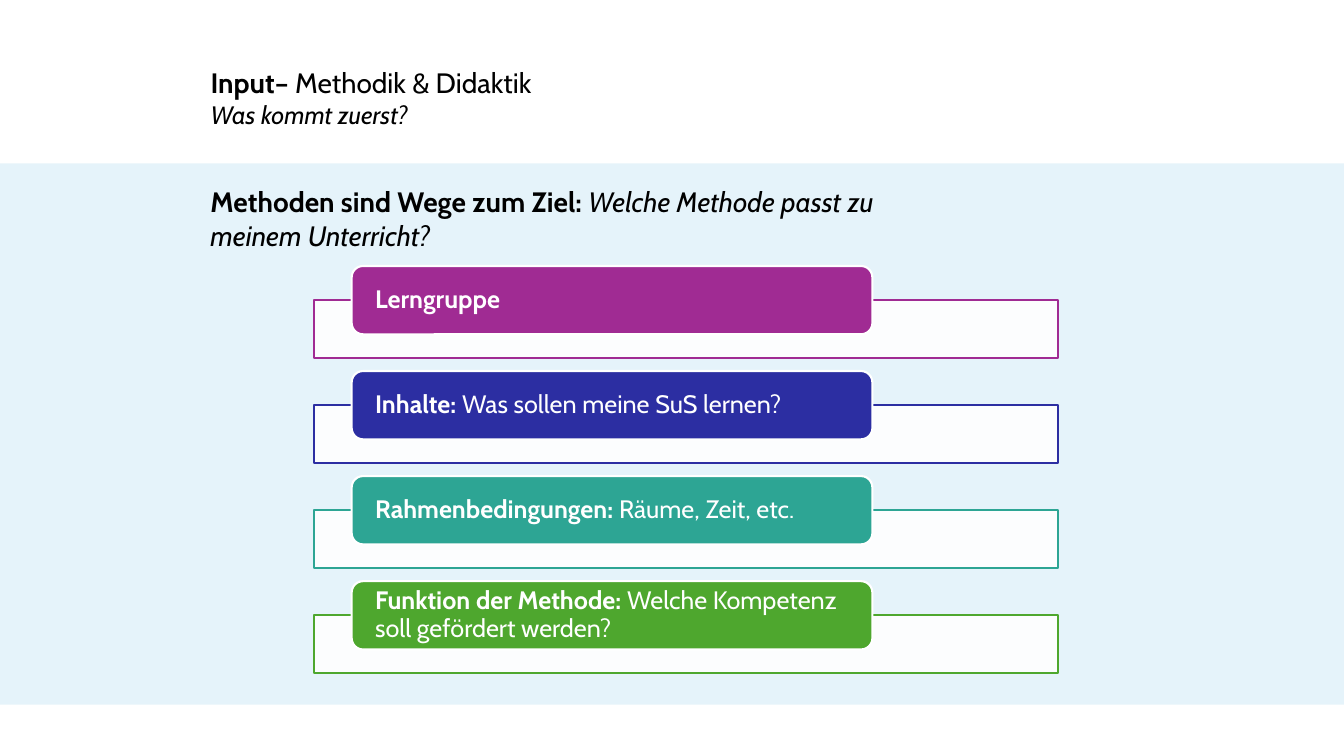
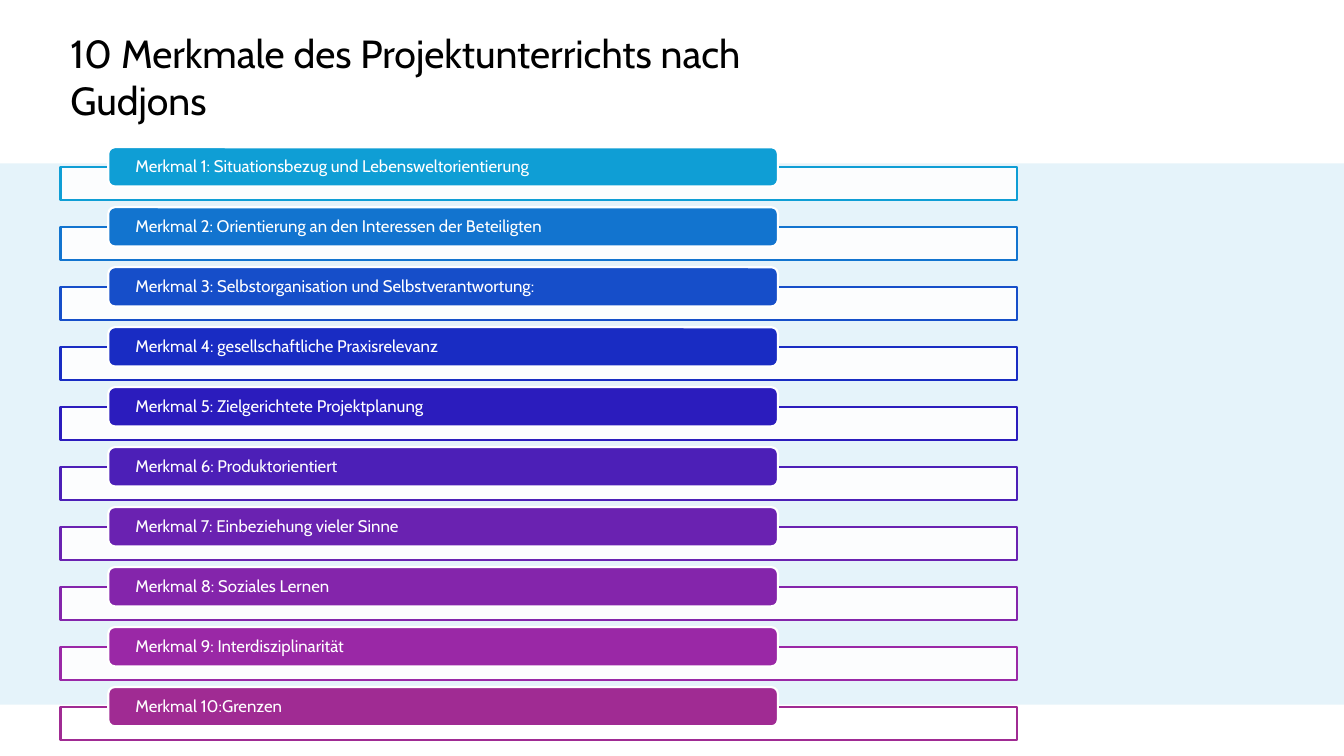
from lxml import etree
from pptx import Presentation
from pptx.dml.color import RGBColor
from pptx.enum.shapes import MSO_SHAPE
from pptx.enum.text import MSO_ANCHOR, PP_ALIGN
from pptx.oxml.ns import qn
from pptx.util import Pt

RECTANGLE = MSO_SHAPE.RECTANGLE
ROUNDED = MSO_SHAPE.ROUNDED_RECTANGLE
LEFT = PP_ALIGN.LEFT
TOP = MSO_ANCHOR.TOP
MIDDLE = MSO_ANCHOR.MIDDLE

SLIDE_WIDTH, SLIDE_HEIGHT = 960, 540
FONT = "Cabin"
COLORS = {
    "text": "000000",
    "white": "FFFFFF",
    "band": "008CCF",
    "plum": "A02B93",
    "indigo": "2C2EA2",
    "teal": "2DA594",
    "green": "4EA72E",
    "sky": "0F9ED5",
    "azure": "1274CF",
    "blue": "164EC9",
    "royal": "192CC3",
    "ultramarine": "2B1CBD",
    "violet": "4C1FB7",
    "purple": "6A22B1",
    "orchid": "8425AB",
    "magenta": "9A28A6",
}

METHOD_QUESTIONS = [
    ("plum", [("Lerngruppe", "b")]),
    ("indigo", [("Inhalte: ", "b"), ("Was sollen meine SuS lernen?", "")]),
    ("teal", [("Rahmenbedingungen: ", "b"), ("Räume, Zeit, etc.", "")]),
    ("green", [("Funktion der Methode: ", "b"),
               ("Welche Kompetenz soll gefördert werden?", "")]),
]
PROJECT_FEATURES = [
    ("sky", [("Merkmal 1: Situationsbezug und Lebensweltorientierung", "")]),
    ("azure", [("Merkmal 2: Orientierung an den Interessen der Beteiligten", "")]),
    ("blue", [("Merkmal 3: Selbstorganisation und Selbstverantwortung:", "")]),
    ("royal", [("Merkmal 4: gesellschaftliche Praxisrelevanz", "")]),
    ("ultramarine", [("Merkmal 5: Zielgerichtete Projektplanung", "")]),
    ("violet", [("Merkmal 6: Produktorientiert", "")]),
    ("purple", [("Merkmal 7: Einbeziehung vieler Sinne", "")]),
    ("orchid", [("Merkmal 8: Soziales Lernen", "")]),
    ("magenta", [("Merkmal 9: Interdisziplinarität", "")]),
    ("plum", [("Merkmal 10:Grenzen", "")]),
]


def rgb(color):
    """Return the named colour."""
    return RGBColor.from_string(COLORS[color])


def add_panel(slide, box, fill, line=None, kind=RECTANGLE, opacity=100):
    """Add a flat shape with an optional outline and transparency."""
    panel = slide.shapes.add_shape(kind, *map(Pt, box))
    panel.shadow.inherit = False
    panel.fill.solid()
    panel.fill.fore_color.rgb = rgb(fill)
    if opacity < 100:
        fill_color = panel._element.spPr.find(qn("a:solidFill"))[0]
        etree.SubElement(fill_color, qn("a:alpha"), val=str(opacity * 1000))
    if line:
        panel.line.color.rgb = rgb(line)
        panel.line.width = Pt(1.5)
    else:
        panel.line.fill.background()
    return panel


def write_text(frame, paragraphs, color="text", anchor=TOP, spacing=1,
               margins=(7.2, 3.6)):
    """Write paragraphs, each a size and a list of (text, style) runs."""
    frame.word_wrap = True
    frame.vertical_anchor = anchor
    frame.margin_left = frame.margin_right = Pt(margins[0])
    frame.margin_top = frame.margin_bottom = Pt(margins[1])
    for index, (size, runs) in enumerate(paragraphs):
        paragraph = frame.add_paragraph() if index else frame.paragraphs[0]
        paragraph.alignment = LEFT
        paragraph.line_spacing = spacing
        for text, style in runs:
            run = paragraph.add_run()
            run.text = text
            run.font.name = FONT
            run.font.size = Pt(size)
            run.font.bold = "b" in style
            run.font.italic = "i" in style
            run.font.color.rgb = rgb(color)


def add_heading(slide, box, paragraphs):
    """Place heading text in its box."""
    heading = slide.shapes.add_textbox(*map(Pt, box))
    write_text(heading.text_frame, paragraphs)


def add_tab_list(slide, box, entries, tab_height, size, indent):
    """Spread tabbed frames evenly over the height of the box."""
    left, top, width, height = box
    frame_height = 0.85 * tab_height
    row_height = tab_height / 2 + frame_height
    pitch = (height - row_height) / (len(entries) - 1)
    for row, (color, runs) in enumerate(entries):
        tab_top = top + row * pitch
        add_panel(slide, (left, tab_top + tab_height / 2, width, frame_height),
                  "white", line=color, opacity=90)
        tab = add_panel(slide, (left + 0.05 * width, tab_top, 0.7 * width, tab_height),
                        color, line="white", kind=ROUNDED)
        write_text(tab.text_frame, [(size, runs)], color="white", anchor=MIDDLE,
                   spacing=0.9, margins=(indent, 0))


def add_banded_slide(deck):
    """Add a blank slide with the pale band across it."""
    slide = deck.slides.add_slide(deck.slide_layouts[6])
    add_panel(slide, (0, 116.8, SLIDE_WIDTH, 386.6), "band", opacity=10)
    return slide


def build_methods_slide(deck):
    """Build the slide on choosing a method."""
    slide = add_banded_slide(deck)
    add_heading(slide, (143.3, 43.2, 459.4, 53.3), [
        (20, [("Input– ", "b"), ("Methodik & Didaktik", "")]),
        (18, [("Was kommt zuerst?", "i")]),
    ])
    add_heading(slide, (143.3, 128.2, 496, 55.4), [
        (20, [("Methoden sind Wege zum Ziel: ", "b"),
              ("Welche Methode passt zu meinem Unterricht?", "i")]),
    ])
    add_tab_list(slide, (224.6, 190, 531.4, 291), METHOD_QUESTIONS,
                 tab_height=48.8, size=18, indent=14.4)


def build_features_slide(deck):
    """Build the slide listing the ten features."""
    slide = add_banded_slide(deck)
    add_tab_list(slide, (43.2, 105.2, 683.3, 423.4), PROJECT_FEATURES,
                 tab_height=28, size=12, indent=18)
    add_heading(slide, (43.2, 17.3, 568.8, 97.2), [
        (28, [("10 Merkmale des Projektunterrichts nach Gudjons", "")]),
    ])


def main():
    """Build and save the presentation."""
    deck = Presentation()
    deck.slide_width, deck.slide_height = Pt(SLIDE_WIDTH), Pt(SLIDE_HEIGHT)
    build_methods_slide(deck)
    build_features_slide(deck)
    deck.save("out.pptx")


if __name__ == "__main__":
    main()
